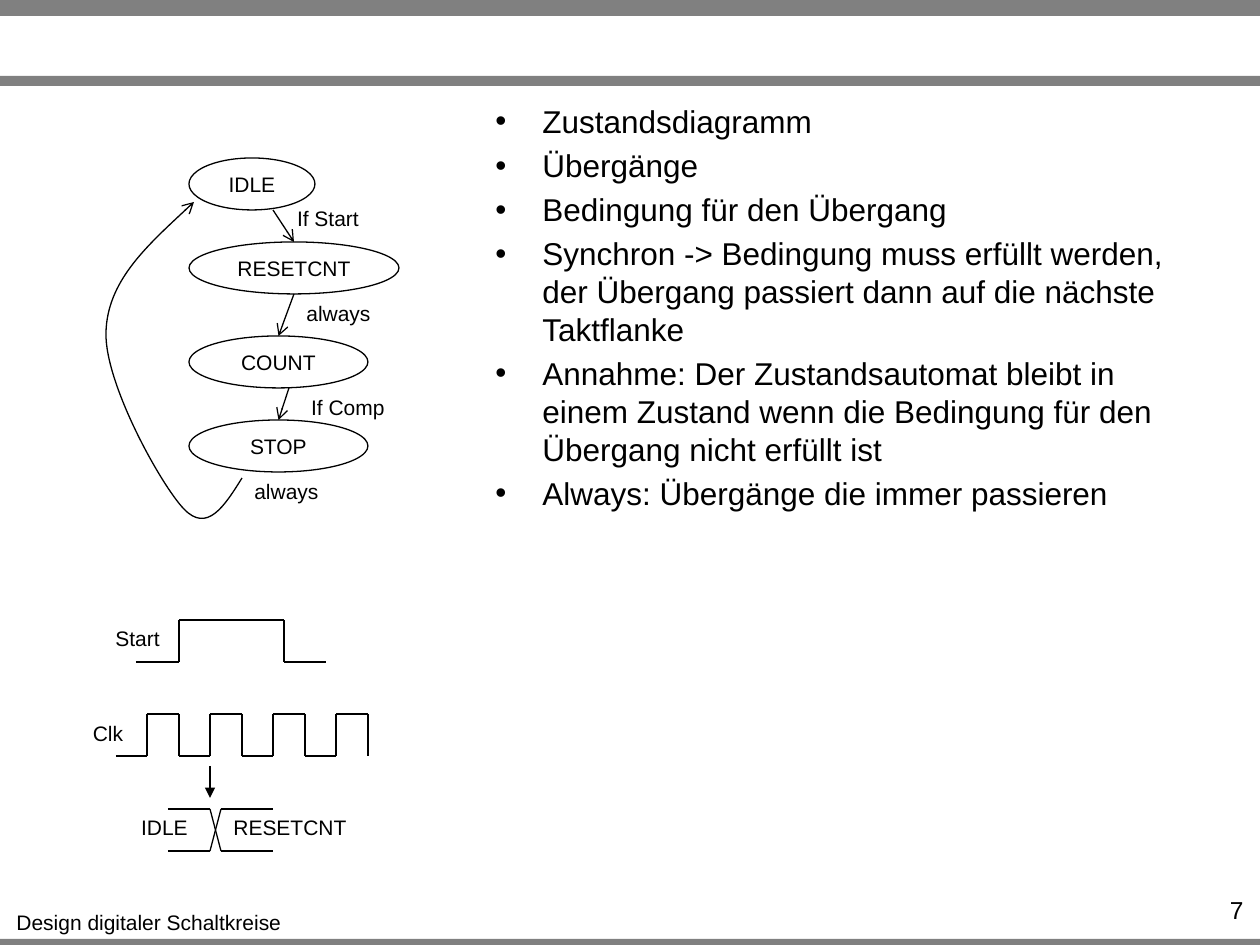
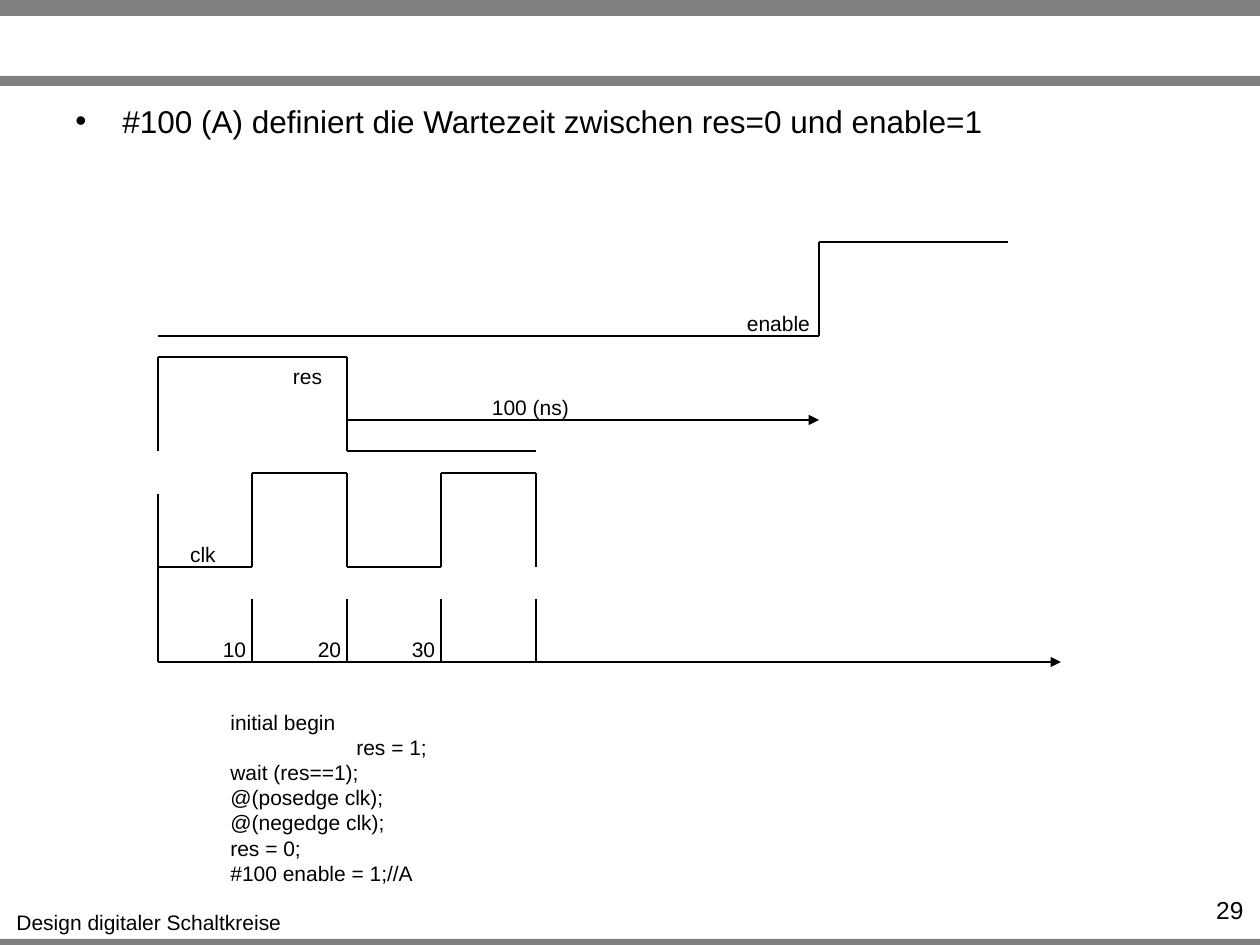
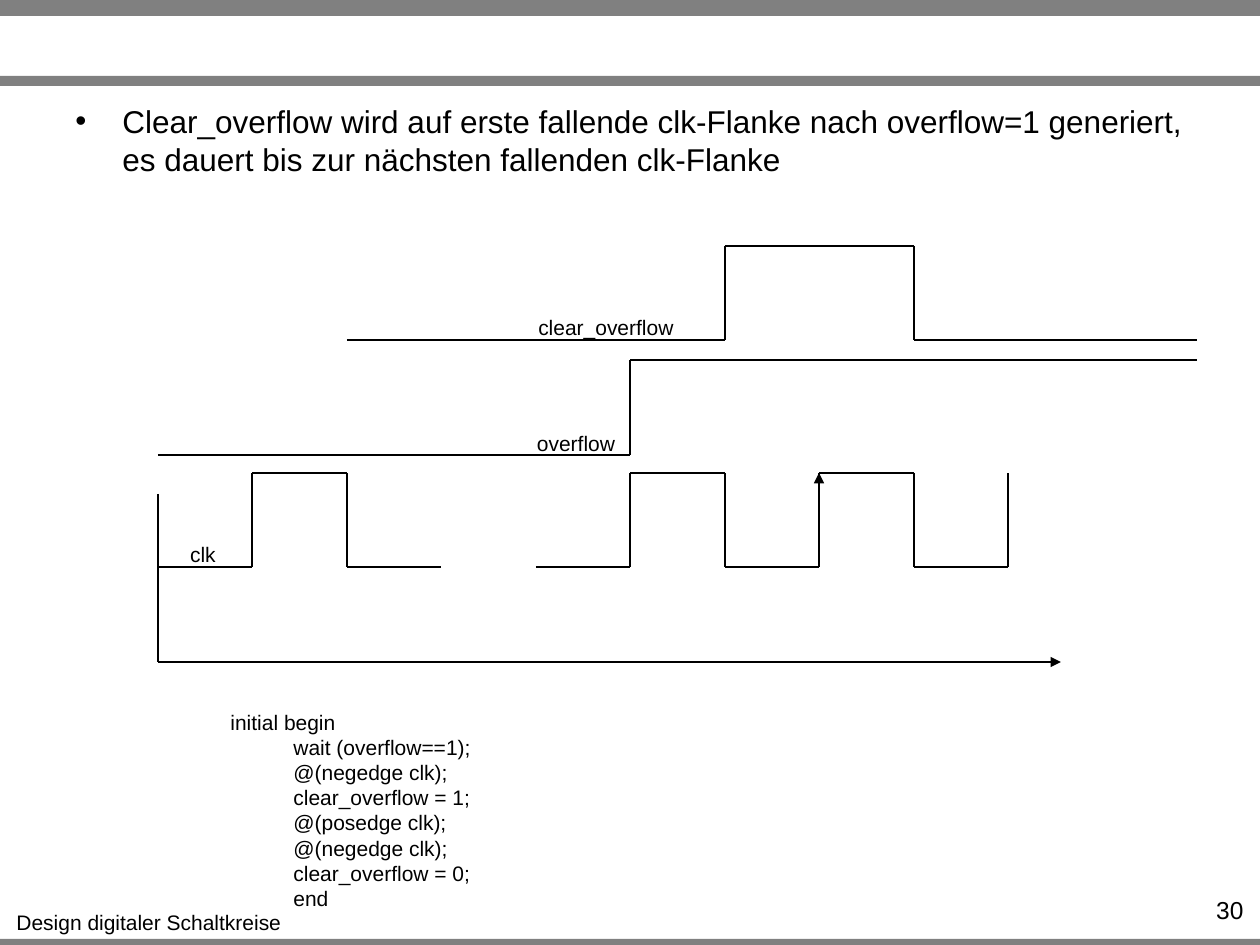
from itertools import pairwise

from lxml.etree import SubElement
from pptx import Presentation
from pptx.dml.color import RGBColor
from pptx.enum.shapes import MSO_CONNECTOR, MSO_SHAPE
from pptx.enum.text import MSO_ANCHOR, MSO_AUTO_SIZE, PP_ALIGN
from pptx.oxml.ns import qn
from pptx.util import Inches, Pt

FONT = "Arial"
INK = "000000"
BAND = "808080"
LINE_WIDTH = 0.75
BLANK_LAYOUT = 6
CLK_LOW, CLK_HIGH = 567, 473
AXIS_X, AXIS_Y = 158, 662


def px(length):
    """Turn pixels into EMU."""
    return round(length * Inches(10) / 1260)


def color(hex_code):
    """Turn a hex string into a colour."""
    return RGBColor.from_string(hex_code)


def tick(number):
    """Give the x of a half clock period on the time axis."""
    return AXIS_X + number * 189 // 2


def style_paragraph(paragraph, size, align=PP_ALIGN.LEFT):
    """Set font and alignment of a paragraph."""
    paragraph.alignment = align
    paragraph.font.name = FONT
    paragraph.font.size = Pt(size)
    paragraph.font.color.rgb = color(INK)


def style_line(line, arrow=None):
    """Make a thin dark line, with an arrowhead at its end if one is named."""
    line.color.rgb = color(INK)
    line.width = Pt(LINE_WIDTH)
    if arrow:
        SubElement(line._get_or_add_ln(), qn("a:tailEnd"), type=arrow)


def add_text(slide, left, top, width, height, wrap=False):
    """Add an empty text box, growing unless it wraps, and return its frame."""
    frame = slide.shapes.add_textbox(px(left), px(top), px(width), px(height)).text_frame
    frame.word_wrap = wrap
    frame.auto_size = MSO_AUTO_SIZE.NONE if wrap else MSO_AUTO_SIZE.SHAPE_TO_FIT_TEXT
    return frame


def add_label(slide, text, left, top, width):
    """Add a short centred label."""
    frame = add_text(slide, left, top, width, 38)
    frame.text = text
    style_paragraph(frame.paragraphs[0], 12, PP_ALIGN.CENTER)


def add_band(slide, top, height):
    """Add a grey band across the slide."""
    band = slide.shapes.add_shape(MSO_SHAPE.RECTANGLE, 0, px(top), px(1260), px(height))
    band.shadow.inherit = False
    band.fill.solid()
    band.fill.fore_color.rgb = color(BAND)
    band.line.fill.background()


def add_page(deck, number):
    """Add a slide with its bands, footer and page number."""
    slide = deck.slides.add_slide(deck.slide_layouts[BLANK_LAYOUT])
    for top, height in ((939, 10), (0, 16), (76, 10)):
        add_band(slide, top, height)
    add_label(slide, "Design digitaler Schaltkreise", 3, 903, 292)
    frame = add_text(slide, 1146, 889, 110, 30, wrap=True)
    frame.text = str(number)
    style_paragraph(frame.paragraphs[0], 14, PP_ALIGN.RIGHT)
    return slide


def add_bullets(slide, points, left, width, height):
    """Add the bulleted main text."""
    frame = add_text(slide, left, 96, width, height, wrap=True)
    frame.text = "\n".join(points)
    for index, paragraph in enumerate(frame.paragraphs):
        if index:
            paragraph.space_before = Pt(3.6)
        properties = paragraph._p.get_or_add_pPr()
        properties.set("marL", str(px(47)))
        properties.set("indent", str(-px(47)))
        SubElement(properties, qn("a:buFont"), typeface=FONT)
        SubElement(properties, qn("a:buChar"), char="•")
        style_paragraph(paragraph, 18)


def add_code(slide, lines, width, height):
    """Add code lines, each given as an indent and its text."""
    frame = add_text(slide, 218, 703, width, height)
    frame.text = "\n".join(text for _, text in lines)
    for paragraph, (indent, _) in zip(frame.paragraphs, lines):
        paragraph._p.get_or_add_pPr().set("marL", str(px(indent)))
        style_paragraph(paragraph, 12)


def add_line(slide, start, end, arrow=None):
    """Add a straight line between two points."""
    line = slide.shapes.add_connector(
        MSO_CONNECTOR.STRAIGHT, *map(px, start), *map(px, end))
    style_line(line.line, arrow)
    SubElement(line._element.spPr, qn("a:effectLst"))
    return line


def add_trace(slide, points):
    """Join points by straight lines."""
    for start, end in pairwise(points):
        add_line(slide, start, end)


def add_signal(slide, start, edges, low, high, end=None):
    """Draw a signal that starts low and toggles at every edge."""
    level, other = low, high
    points = [(start, level)]
    for edge in edges:
        points += [(edge, level), (edge, other)]
        level, other = other, level
    if end is not None:
        points.append((end, level))
    add_trace(slide, points)


def add_state(slide, name, top, width):
    """Add a state ellipse."""
    state = slide.shapes.add_shape(MSO_SHAPE.OVAL, px(189), px(top), px(width), px(52))
    state.shadow.inherit = False
    state.fill.background()
    style_line(state.line)
    state.text_frame.word_wrap = False
    state.text_frame.vertical_anchor = MSO_ANCHOR.MIDDLE
    state.text_frame.text = name
    style_paragraph(state.text_frame.paragraphs[0], 12, PP_ALIGN.CENTER)
    return state


def add_curve(slide, start, curves):
    """Add an open curve with an arrowhead, each part given by three points."""
    curves = [[tuple(map(px, point)) for point in curve] for curve in curves]
    builder = slide.shapes.build_freeform(*map(px, start))
    builder.add_line_segments([curve[-1] for curve in curves], close=False)
    loop = builder.convert_to_shape()
    for straight, curve in zip(list(loop._element.iter(qn("a:lnTo"))), curves):
        outline = straight.getparent()
        outline.remove(straight)
        bezier = SubElement(outline, qn("a:cubicBezTo"))
        for x, y in curve:
            SubElement(bezier, qn("a:pt"), x=str(x - loop.left), y=str(y - loop.top))
    loop.shadow.inherit = False
    loop.fill.background()
    style_line(loop.line, "arrow")


def add_time_axis(slide):
    """Add the time axis with the label of the clock."""
    add_line(slide, (AXIS_X, 494), (AXIS_X, AXIS_Y))
    add_line(slide, (AXIS_X, AXIS_Y), (1061, AXIS_Y), "triangle")
    add_label(slide, "clk", 177, 535, 52)


def add_state_diagram(slide):
    """Draw the states and the transitions between them."""
    add_state(slide, "IDLE", 158, 126)
    transitions = (
        ("RESETCNT", 242, 210, (273, 210)),
        ("COUNT", 336, 179, (294, 294)),
        ("STOP", 420, 179, (289, 388)),
    )
    for name, top, width, start in transitions:
        state = add_state(slide, name, top, width)
        transition = add_line(slide, start, (189 + width // 2, top), "arrow")
        transition.end_connect(state, 0)
    add_curve(slide, (242, 478), (
        ((224, 507), (207, 533), (184, 509)),
        ((161, 485), (105, 384), (106, 333)),
        ((107, 282), (151, 242), (194, 202)),
    ))
    for text, left, top, width in (
        ("If Start", 284, 199, 88), ("always", 294, 294, 89),
        ("If Comp", 298, 388, 100), ("always", 242, 472, 89),
    ):
        add_label(slide, text, left, top, width)


def add_start_timing(slide):
    """Draw start, clock and the change of state."""
    add_signal(slide, 136, (179, 284), 662, 620, end=326)
    add_signal(slide, 116, [116 + n * 63 // 2 for n in range(1, 9)], 756, 714)
    for before, after in ((851, 809), (809, 851)):
        add_trace(slide, [(168, before), (210, before), (221, after), (273, after)])
    add_line(slide, (210, 766), (210, 798), "triangle")
    for text, left, top, width in (
        ("Start", 102, 619, 71), ("Clk", 78, 714, 60),
        ("IDLE", 128, 808, 73), ("RESETCNT", 220, 808, 140),
    ):
        add_label(slide, text, left, top, width)


def build_state_machine(deck):
    """Build the slide on the state diagram."""
    slide = add_page(deck, 7)
    add_bullets(slide, (
        "Zustandsdiagramm",
        "Übergänge",
        "Bedingung für den Übergang",
        "Synchron -> Bedingung muss erfüllt werden, der Übergang passiert dann "
        "auf die nächste Taktflanke",
        "Annahme: Der Zustandsautomat bleibt in einem Zustand wenn die Bedingung "
        "für den Übergang nicht erfüllt ist",
        "Always: Übergänge die immer passieren",
    ), 483, 714, 251)
    add_state_diagram(slide)
    add_start_timing(slide)


def build_wait_time(deck):
    """Build the slide on the delay between res and enable."""
    slide = add_page(deck, 29)
    add_bullets(slide, (
        "#100 (A) definiert die Wartezeit zwischen res=0 und enable=1",
    ), 63, 1134, 73)
    add_time_axis(slide)
    add_signal(slide, AXIS_X, [tick(n) for n in range(1, 5)], CLK_LOW, CLK_HIGH)
    for n in range(1, 5):
        add_line(slide, (tick(n), 599), (tick(n), AXIS_Y))
    for n in range(1, 4):
        add_label(slide, str(10 * n), tick(n) - 42, 630, 49)
    add_trace(slide, [(AXIS_X, 451), (AXIS_X, 357), (tick(2), 357),
                      (tick(2), 451), (tick(4), 451)])
    add_trace(slide, [(AXIS_X, 336), (tick(2), 336), (tick(7), 336),
                      (tick(7), 242), (tick(9), 242)])
    add_line(slide, (tick(2), 420), (tick(7), 420), "triangle")
    add_label(slide, "enable", 733, 304, 91)
    add_label(slide, "res", 280, 357, 55)
    add_label(slide, "100 (ns)", 479, 388, 103)
    add_code(slide, (
        (0, "initial begin"),
        (126, "res = 1;"),
        (0, "wait (res==1);"),
        (0, "@(posedge clk);"),
        (0, "@(negedge clk);"),
        (0, "res = 0;"),
        (0, "#100 enable = 1;//A"),
    ), 224, 190)


def build_clear_overflow(deck):
    """Build the slide on clearing the overflow."""
    slide = add_page(deck, 30)
    add_bullets(slide, (
        "Clear_overflow wird auf erste fallende clk-Flanke nach overflow=1 "
        "generiert, es dauert bis zur nächsten fallenden clk-Flanke",
    ), 63, 1134, 73)
    add_time_axis(slide)
    add_signal(slide, AXIS_X, (tick(1), tick(2)), CLK_LOW, CLK_HIGH, end=tick(3))
    add_signal(slide, tick(4), [tick(n) for n in range(5, 10)], CLK_LOW, CLK_HIGH)
    add_line(slide, (tick(7), CLK_LOW), (tick(7), CLK_HIGH), "triangle")
    add_signal(slide, AXIS_X, [tick(5)], 455, 360, end=1197)
    add_signal(slide, tick(2), (tick(6), tick(8)), 340, 246, end=1197)
    add_label(slide, "clear_overflow", 523, 308, 166)
    add_label(slide, "overflow", 524, 424, 104)
    add_code(slide, (
        (0, "initial begin"),
        (63, "wait (overflow==1);"),
        (63, "@(negedge clk);"),
        (63, "clear_overflow = 1;"),
        (63, "@(posedge clk);"),
        (63, "@(negedge clk);"),
        (63, "clear_overflow = 0;"),
        (63, "end"),
    ), 268, 217)


def main():
    """Build the slides and save them."""
    deck = Presentation()
    deck.slide_width, deck.slide_height = px(1260), px(945)
    build_state_machine(deck)
    build_wait_time(deck)
    build_clear_overflow(deck)
    deck.save("out.pptx")


if __name__ == "__main__":
    main()
